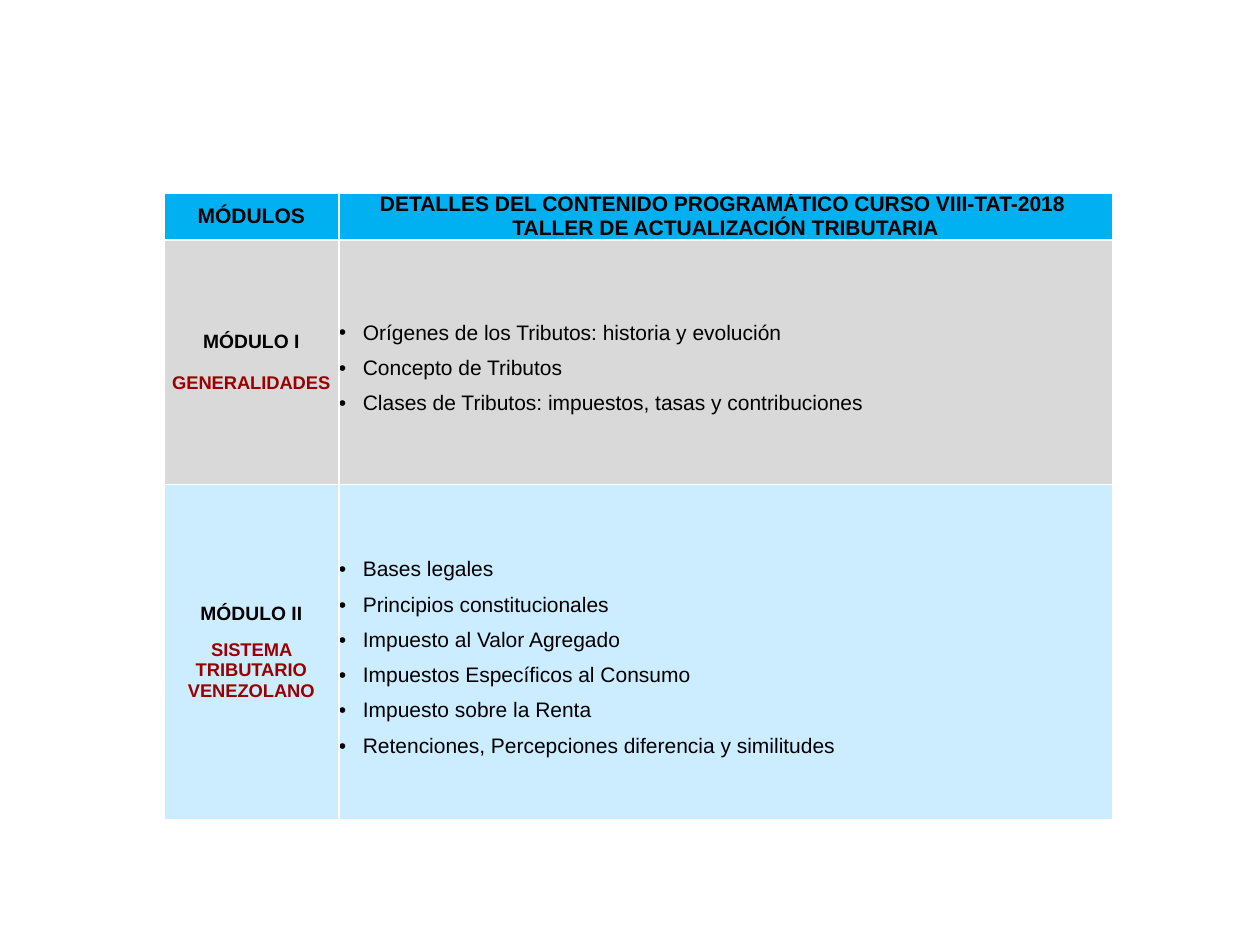
from lxml.etree import SubElement
from pptx import Presentation
from pptx.dml.color import RGBColor
from pptx.enum.text import MSO_ANCHOR, PP_ALIGN
from pptx.oxml.ns import qn
from pptx.util import Inches, Pt

BLACK, RED, WHITE = "000000", "990000", "FFFFFF"
HEADER_FILL = "00B0F0"
HEADINGS = [
    ["MÓDULOS"],
    ["DETALLES DEL CONTENIDO PROGRAMÁTICO CURSO VIII-TAT-2018 ",
     "TALLER DE ACTUALIZACIÓN TRIBUTARIA"],
]
# Module, title, space before the title in points, fill, topics
MODULES = [
    ("MÓDULO I", "GENERALIDADES", 12, "D9D9D9", [
        "Orígenes de los Tributos: historia y evolución",
        "Concepto de Tributos",
        "Clases de Tributos: impuestos, tasas y contribuciones",
    ]),
    ("MÓDULO II", "SISTEMA TRIBUTARIO VENEZOLANO", 9, "CCECFF", [
        "Bases legales",
        "Principios constitucionales",
        "Impuesto al Valor Agregado",
        "Impuestos Específicos al Consumo",
        "Impuesto sobre la Renta",
        "Retenciones, Percepciones diferencia y similitudes",
    ]),
]


def color(hex_value):
    return RGBColor.from_string(hex_value)


def style_cell(cell, fill):
    cell.margin_left = cell.margin_right = cell.margin_top = cell.margin_bottom = 0
    cell.vertical_anchor = MSO_ANCHOR.MIDDLE
    properties = cell._tc.get_or_add_tcPr()
    for side in ("a:lnL", "a:lnR", "a:lnT", "a:lnB"):
        border = SubElement(properties, qn(side), w=str(Pt(1)))
        border_fill = SubElement(border, qn("a:solidFill"))
        SubElement(border_fill, qn("a:srgbClr"), val=WHITE)
    cell.fill.solid()
    cell.fill.fore_color.rgb = color(fill)


def write_paragraphs(cell, lines):
    cell.text_frame.text = "\n".join(lines)
    return cell.text_frame.paragraphs


def style_paragraph(paragraph, size, bold=True, hex_value=BLACK, alignment=PP_ALIGN.CENTER):
    paragraph.alignment = alignment
    for run in paragraph.runs:
        run.font.name = "Arial"
        run.font.size = Pt(size)
        run.font.bold = bold
        run.font.color.rgb = color(hex_value)


def add_bullet(paragraph):
    properties = paragraph._p.get_or_add_pPr()
    properties.set("marL", str(Inches(0.19)))
    properties.set("indent", str(Inches(-0.19)))
    SubElement(properties, qn("a:buFont"), typeface="Arial")
    SubElement(properties, qn("a:buChar"), char="•")


def fill_module_row(name_cell, topics_cell, module):
    name, title, gap, fill, topics = module
    style_cell(name_cell, fill)
    style_cell(topics_cell, fill)
    name_paragraph, title_paragraph = write_paragraphs(name_cell, [name, title])
    style_paragraph(name_paragraph, 11)
    style_paragraph(title_paragraph, 10.5, hex_value=RED)
    title_paragraph.space_before = Pt(gap)
    for paragraph in write_paragraphs(topics_cell, topics):
        add_bullet(paragraph)
        paragraph.line_spacing = 1.5
        style_paragraph(paragraph, 12, bold=False, alignment=PP_ALIGN.JUSTIFY)


def add_program_table(slide, left, top, width, height):
    header_height, first_module_height, name_width = Inches(0.37), Inches(1.94), Inches(1.39)
    table = slide.shapes.add_table(len(MODULES) + 1, 2, left, top, width, height).table
    table.horz_banding = False
    table.columns[0].width = name_width
    table.columns[1].width = width - name_width
    heights = [header_height, first_module_height, height - header_height - first_module_height]
    for row, row_height in zip(table.rows, heights):
        row.height = row_height
    for column, lines in enumerate(HEADINGS):
        cell = table.cell(0, column)
        style_cell(cell, HEADER_FILL)
        for paragraph in write_paragraphs(cell, lines):
            style_paragraph(paragraph, 12)
    for row, module in enumerate(MODULES, start=1):
        fill_module_row(table.cell(row, 0), table.cell(row, 1), module)


def main():
    presentation = Presentation()
    presentation.slide_width, presentation.slide_height = Inches(10), Inches(7.5)
    slide = presentation.slides.add_slide(presentation.slide_layouts[6])
    add_program_table(slide, Inches(1.3), Inches(1.53), Inches(7.53), Inches(4.97))
    presentation.save("out.pptx")


if __name__ == "__main__":
    main()
